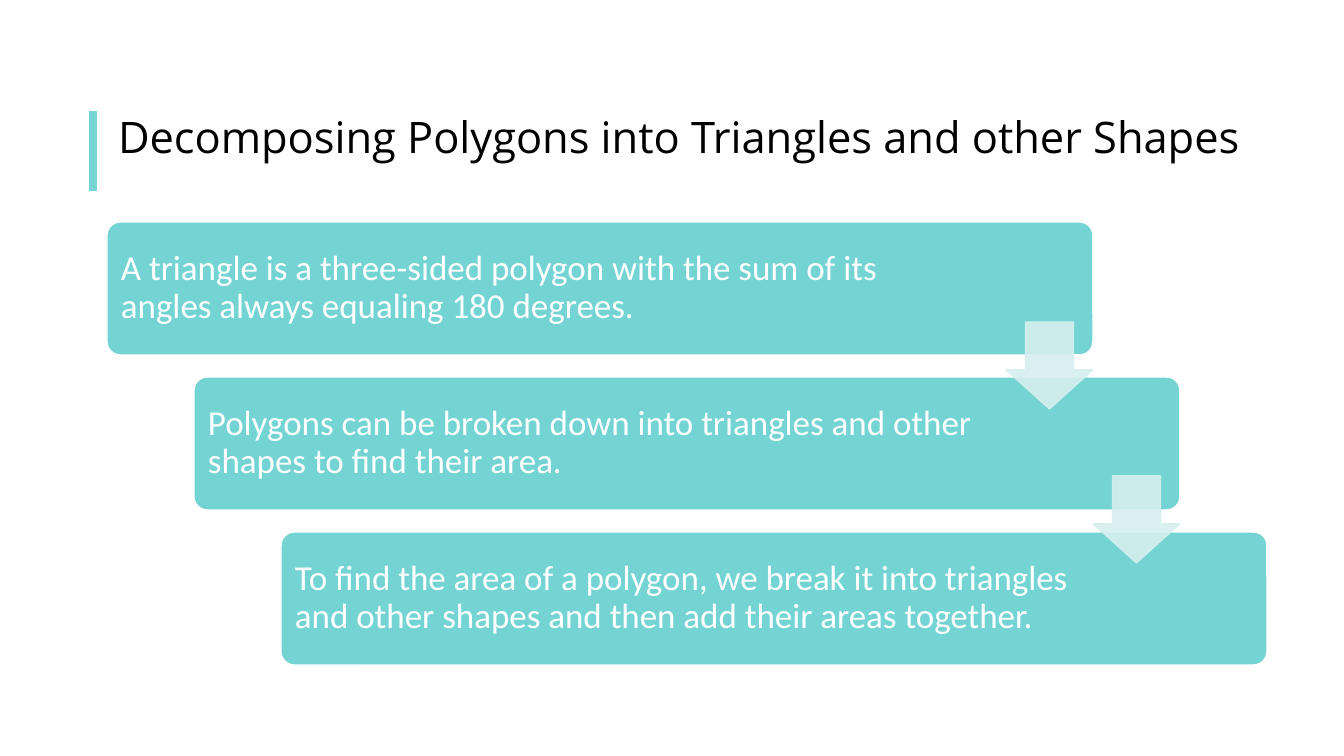
from lxml import etree
from pptx import Presentation
from pptx.dml.color import RGBColor
from pptx.enum.shapes import MSO_CONNECTOR as CONN, MSO_SHAPE as SHAPE
from pptx.enum.text import MSO_ANCHOR as ANCHOR, MSO_AUTO_SIZE as AUTO, PP_ALIGN as ALIGN
from pptx.oxml.ns import qn
from pptx.util import Pt

# Content
TITLE = "Decomposing Polygons into Triangles and other Shapes"
STEPS = [  # text, text width in px
    ("A triangle is a three-sided polygon with the sum of its angles always equaling 180 degrees.", 842),
    ("Polygons can be broken down into triangles and other shapes to find their area.", 804),
    ("To find the area of a polygon, we break it into triangles and other shapes "
     "and then add their areas together.", 804),
]
COLORS = {"bar": "76D5D4", "step": "74D4D3", "arrow": "D6EFEF", "white": "FFFFFF", "black": "000000"}

# Layout in px
SCALE = 914400 / 100.8
STEP_X, STEP_Y, STEP_W, STEP_H = 107, 222, 986, 133
SHIFT_X, SHIFT_Y = 87, 155
TEXT_PAD = 4
ARROW_X, ARROW_Y, ARROW_SIZE, ARROW_SHIFT_Y = 1006, 322, 87, 154


def px(*values):
    return [round(v * SCALE) for v in values]


def color(name):
    return RGBColor.from_string(COLORS[name])


def write(sp, text, *, font, size, fill, anchor, inset=None):
    tf = sp.text_frame
    tf.word_wrap = True
    tf.auto_size = AUTO.NONE
    tf.vertical_anchor = anchor
    if inset is not None:
        tf.margin_left, tf.margin_top, tf.margin_right, tf.margin_bottom = px(*[inset] * 4)
    p = tf.paragraphs[0]
    p.alignment = ALIGN.LEFT
    p.line_spacing = 0.9
    r = p.add_run()
    r.text = text
    r.font.name, r.font.size = font, Pt(size)
    r.font.color.rgb = color(fill)


def add_block(kind, box, adjustments, fill, line, alpha=None):
    sp = slide.shapes.add_shape(kind, *px(*box))
    sp.shadow.inherit = False
    for i, value in enumerate(adjustments):
        sp.adjustments[i] = value
    sp.fill.solid()
    sp.fill.fore_color.rgb = color(fill)
    sp.line.color.rgb = color(line)
    sp.line.width = Pt(1)
    if alpha is not None:
        for clr in sp._element.spPr.iter(qn("a:srgbClr")):
            etree.SubElement(clr, qn("a:alpha"), val=str(alpha * 1000))


prs = Presentation()
prs.slide_width, prs.slide_height = px(1344, 756)
slide = prs.slides.add_slide(prs.slide_layouts[5])

# Title with its accent bar
title = slide.shapes.title
title.left, title.top, title.width, title.height = px(108, 111, 1159, 80)
write(title, TITLE, font="Open Sans", size=31, fill="black", anchor=ANCHOR.TOP)
bar = slide.shapes.add_connector(CONN.STRAIGHT, *px(93, 111, 93, 191))
bar.line.color.rgb = color("bar")
bar.line.width = Pt(6)
etree.SubElement(bar._element.spPr, qn("a:effectLst"))

# Staircase of steps
for i, (text, width) in enumerate(STEPS):
    x, y = STEP_X + i * SHIFT_X, STEP_Y + i * SHIFT_Y
    add_block(SHAPE.ROUNDED_RECTANGLE, (x, y, STEP_W, STEP_H), [0.1], "step", "white")
    tb = slide.shapes.add_textbox(*px(x + TEXT_PAD, y + TEXT_PAD, width, STEP_H - 2 * TEXT_PAD))
    write(tb, text, font="Calibri", size=25, fill="white", anchor=ANCHOR.MIDDLE, inset=10)

# Arrows between steps
for i in range(len(STEPS) - 1):
    box = (ARROW_X + i * SHIFT_X, ARROW_Y + i * ARROW_SHIFT_Y, ARROW_SIZE, ARROW_SIZE)
    add_block(SHAPE.DOWN_ARROW, box, [0.55, 0.45], "arrow", "arrow", alpha=90)

prs.save("out.pptx")
